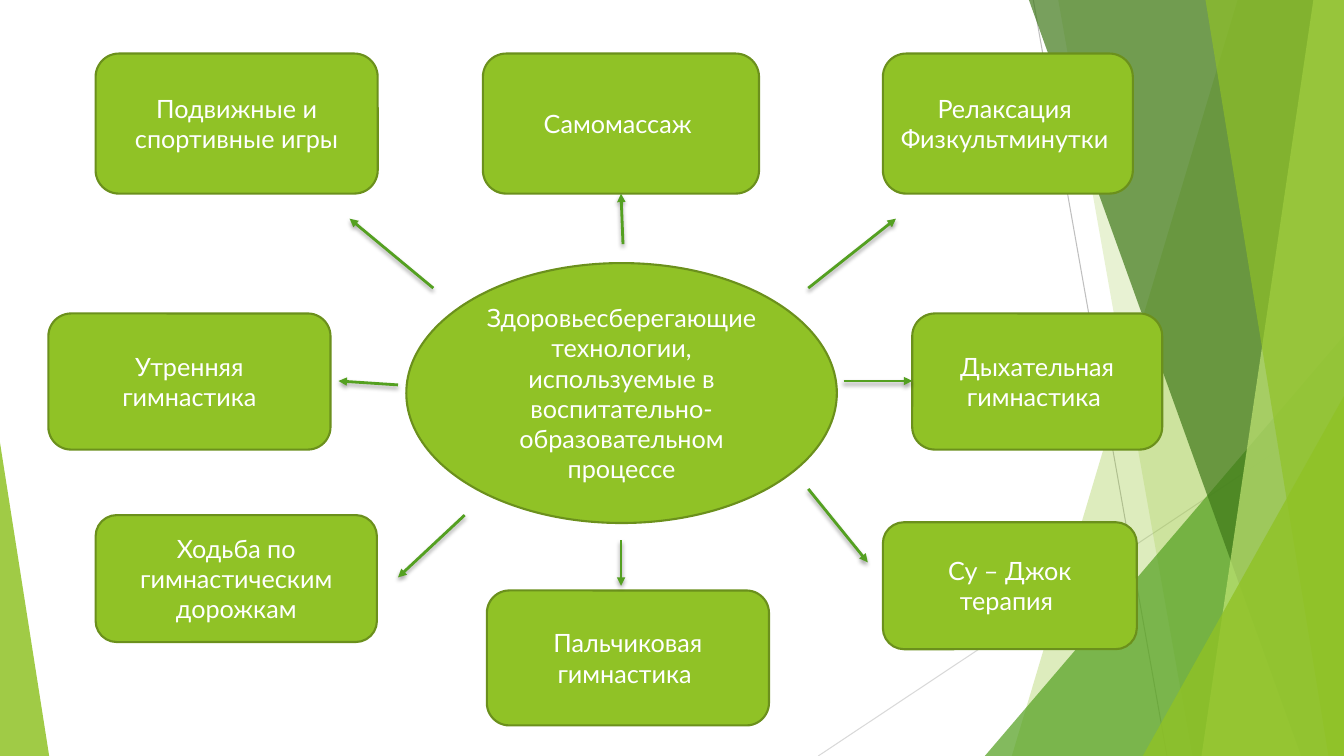
from lxml.etree import SubElement
from pptx import Presentation
from pptx.dml.color import RGBColor
from pptx.enum.shapes import MSO_CONNECTOR, MSO_SHAPE
from pptx.enum.text import MSO_ANCHOR, PP_ALIGN
from pptx.oxml.ns import qn
from pptx.util import Cm, Pt

WHITE = RGBColor(0xFF, 0xFF, 0xFF)
LIME = RGBColor(0x90, 0xC2, 0x26)
OLIVE = RGBColor(0x6B, 0x90, 0x1C)
GREEN = RGBColor(0x54, 0xA0, 0x21)
FOREST = RGBColor(0x3F, 0x78, 0x19)
PALE_LIME = RGBColor(0xC0, 0xE4, 0x74)
GRAY = RGBColor(0xBF, 0xBF, 0xBF)
LIGHT_GRAY = RGBColor(0xD9, 0xD9, 0xD9)
BLACK = RGBColor(0, 0, 0)

SLIDE_WIDTH, SLIDE_HEIGHT = 33.87, 19.05

CENTER_TEXT = "Здоровьесберегающие технологии, используемые в воспитательно-образовательном процессе"
CENTER_OVAL = (9.02, 5.28, 10.85, 6.55)
TOPICS = [
    ("Подвижные и спортивные игры", 1.19, 0, 7.11, 3.53),
    ("Утренняя гимнастика", 0, 6.55, 7.11, 3.43),
    ("Ходьба по гимнастическим дорожкам", 1.19, 11.63, 7.09, 3.2),
    ("Самомассаж ", 10.95, 0, 6.96, 3.53),
    ("Пальчиковая гимнастика ", 11.05, 13.53, 7.11, 3.4),
    ("Релаксация \nФизкультминутки ", 21.03, 0, 6.3, 3.53),
    ("Дыхательная гимнастика ", 21.77, 6.55, 6.3, 3.43),
    ("Су – Джок терапия ", 21.03, 11.81, 6.4, 3.2),
]
ARROWS = [
    (19.15, 5.91, 21.36, 4.16),
    (14.48, 4.8, 14.43, 3.53),
    (9.7, 5.91, 7.59, 4.16),
    (8.81, 8.35, 7.31, 8.25),
    (10.49, 11.63, 8.81, 13.2),
    (14.43, 12.26, 14.43, 13.41),
    (19.15, 10.97, 20.65, 12.82),
    (20.04, 8.25, 21.77, 8.25),
]


def write_text(shape, text, size=18, font="Lato", color=WHITE, align=PP_ALIGN.CENTER):
    frame = shape.text_frame
    frame.word_wrap = True
    frame.vertical_anchor = MSO_ANCHOR.MIDDLE
    frame.text = text
    for paragraph in frame.paragraphs:
        paragraph.alignment = align
        paragraph.font.size = Pt(size)
        paragraph.font.name = font
        paragraph.font.color.rgb = color


def paint_facet(shape, color, opacity):
    shape.shadow.inherit = False
    shape.fill.solid()
    shape.fill.fore_color.rgb = color
    shape.line.fill.background()
    color_element = shape._element.spPr.find(qn("a:solidFill")).find(qn("a:srgbClr"))
    SubElement(color_element, qn("a:alpha"), val=str(opacity * 1000))


def add_line(slide, start_x, start_y, end_x, end_y, color, weight):
    line = slide.shapes.add_connector(
        MSO_CONNECTOR.STRAIGHT, Cm(start_x), Cm(start_y), Cm(end_x), Cm(end_y))
    line.line.color.rgb = color
    line.line.width = Pt(weight)
    effects = SubElement(line._element.spPr, qn("a:effectLst"))
    return line, effects


def add_arrow(slide, *ends):
    arrow, effects = add_line(slide, *ends, GREEN, 2)
    SubElement(arrow.line._get_or_add_ln(), qn("a:tailEnd"), type="triangle")
    shadow = SubElement(effects, qn("a:outerShdw"), blurRad=str(Pt(3)),
                        dist=str(Pt(2)), dir="5400000", rotWithShape="0")
    shadow_color = SubElement(shadow, qn("a:srgbClr"), val=str(BLACK))
    SubElement(shadow_color, qn("a:alpha"), val="35000")


def add_node(slide, kind, text, left, top, width, height):
    node = slide.shapes.add_shape(kind, Cm(left), Cm(top), Cm(width), Cm(height))
    node.shadow.inherit = False
    node.fill.solid()
    node.fill.fore_color.rgb = LIME
    node.line.color.rgb = OLIVE
    node.line.width = Pt(1.5)
    write_text(node, text)


def draw_backdrop(slide, left, top, width, height):
    right, bottom = left + width, top + height

    def band(top_inset, bottom_inset, color, opacity):
        builder = slide.shapes.build_freeform(Cm(right - top_inset), Cm(top))
        builder.add_line_segments([
            (Cm(right), Cm(top)), (Cm(right), Cm(bottom)),
            (Cm(right - bottom_inset), Cm(bottom))])
        paint_facet(builder.convert_to_shape(), color, opacity)

    def corner(corner_left, corner_width, corner_height, apex, color, opacity):
        shape = slide.shapes.add_shape(
            MSO_SHAPE.ISOSCELES_TRIANGLE, Cm(corner_left), Cm(bottom - corner_height),
            Cm(corner_width), Cm(corner_height))
        shape.adjustments[0] = apex
        paint_facet(shape, color, opacity)

    add_line(slide, right - 7.83, top, right - 4.46, bottom, GRAY, 0.75)
    add_line(slide, right, top + 10.24, right - 13.25, bottom, LIGHT_GRAY, 0.75)
    band(2.68, 8.37, LIME, 30)
    band(7.2, 3.82, LIME, 20)
    corner(right - 9.05, 9.05, 10.59, 1, GREEN, 72)
    band(7.94, 1.08, FOREST, 70)
    band(0.77, 3.59, PALE_LIME, 70)
    band(3.49, 0.39, LIME, 65)
    corner(right - 5.07, 5.07, 9.07, 1, LIME, 80)
    corner(left, 1.24, 7.9, 0, LIME, 85)


def draw_diagram(slide, left, top):
    def place(x, y, width, height):
        return left + x, top + y, width, height

    add_node(slide, MSO_SHAPE.OVAL, CENTER_TEXT, *place(*CENTER_OVAL))
    for text, *box in TOPICS:
        add_node(slide, MSO_SHAPE.ROUNDED_RECTANGLE, text, *place(*box))
    for start_x, start_y, end_x, end_y in ARROWS:
        add_arrow(slide, left + start_x, top + start_y, left + end_x, top + end_y)


def main():
    presentation = Presentation()
    presentation.slide_width = Cm(SLIDE_WIDTH)
    presentation.slide_height = Cm(SLIDE_HEIGHT)
    slide = presentation.slides.add_slide(presentation.slide_layouts[6])
    draw_backdrop(slide, 0, 0, SLIDE_WIDTH, SLIDE_HEIGHT)
    draw_diagram(slide, 1.22, 1.35)
    presentation.save("out.pptx")


if __name__ == "__main__":
    main()
